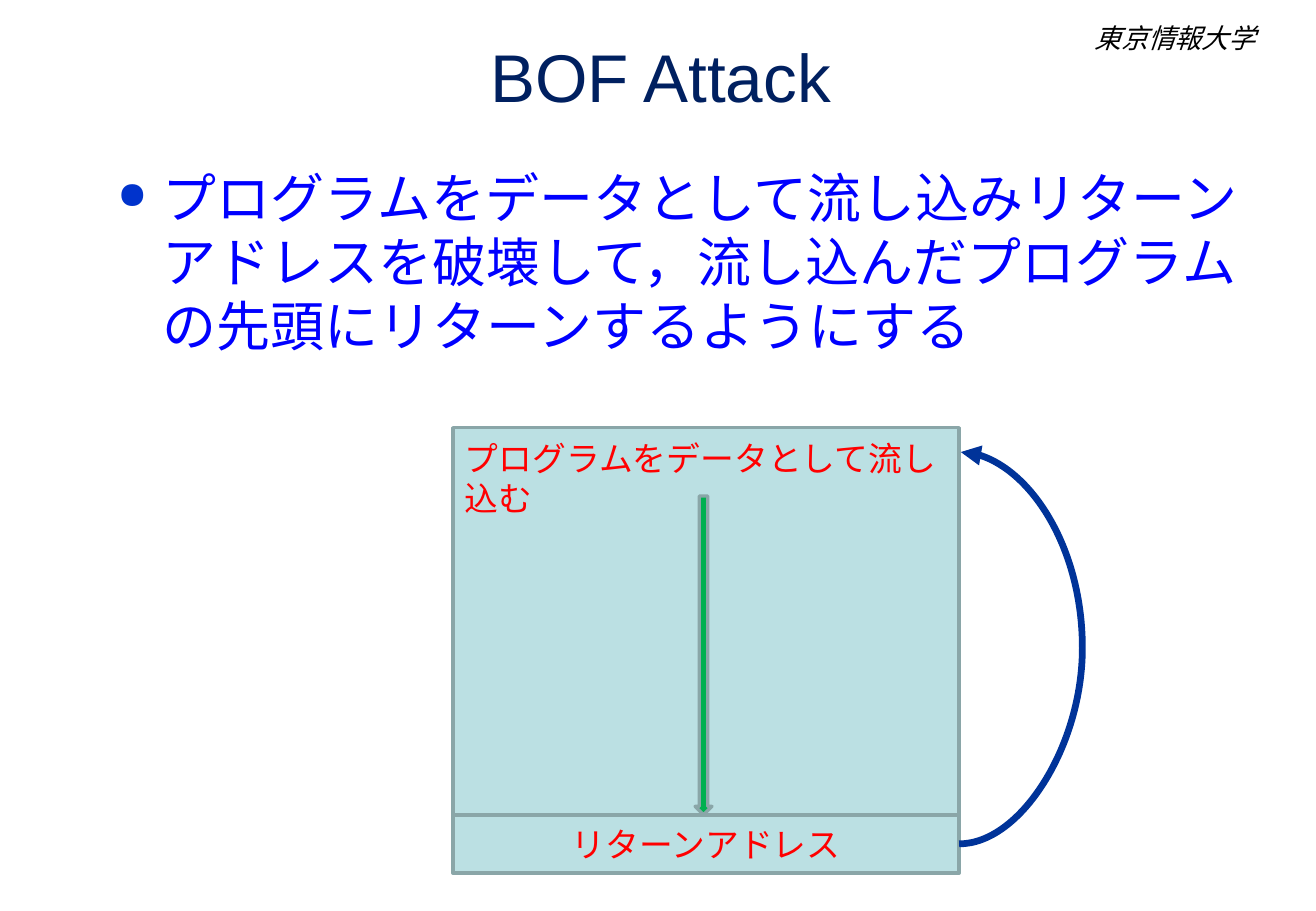
import pptx
import pptx.util
import pptx.dml.color
import pptx.enum.shapes
import pptx.enum.text
import pptx.oxml
import pptx.oxml.ns

Pt = pptx.util.Pt
ALIGN = pptx.enum.text.PP_ALIGN
ANCHOR = pptx.enum.text.MSO_ANCHOR
SHAPE = pptx.enum.shapes.MSO_SHAPE

LATIN_FONT = "Arial"
JAPANESE_FONT = "Noto Sans CJK JP"
BOX_FILL, BOX_LINE = "BBE0E3", "8AA6A8"
RED = "FF0000"

# Memory diagram: the return address sits right under the buffer
STACK_LEFT, STACK_WIDTH = 268.5, 300
BUFFER_TOP, BUFFER_HEIGHT = 253.5, 229.5
RETURN_TOP, RETURN_HEIGHT = BUFFER_TOP + BUFFER_HEIGHT, 34.5
STACK_RIGHT = STACK_LEFT + STACK_WIDTH


def color(hex_string):
    return pptx.dml.color.RGBColor.from_string(hex_string)


def xml(tag, attributes):
    namespace = pptx.oxml.ns.nsdecls("a")
    return pptx.oxml.parse_xml(f"<a:{tag} {namespace} {attributes}/>")


def write(shape, text, size, hex_string, font=LATIN_FONT, align=ALIGN.LEFT,
          anchor=ANCHOR.TOP, wrap=True, italic=None, line_height=None):
    frame = shape.text_frame
    frame.word_wrap = wrap
    frame.vertical_anchor = anchor
    paragraph = frame.paragraphs[0]
    paragraph.alignment = align
    if line_height:
        paragraph.line_spacing = Pt(line_height)
    run = paragraph.add_run()
    run.text = text
    run.font.size = Pt(size)
    run.font.italic = italic
    run.font.color.rgb = color(hex_string)
    run.font.name = font
    run.font._element.find(pptx.oxml.ns.qn("a:latin")).addnext(
        xml("ea", f'typeface="{font}"'))
    return paragraph


def add_text(slide, left, top, width, height, text, size, hex_string, **style):
    box = slide.shapes.add_textbox(Pt(left), Pt(top), Pt(width), Pt(height))
    return write(box, text, size, hex_string, **style)


def add_box(slide, kind, left, top, width, height, fill=BOX_FILL):
    shape = slide.shapes.add_shape(kind, Pt(left), Pt(top), Pt(width), Pt(height))
    shape.shadow.inherit = False
    shape.fill.solid()
    shape.fill.fore_color.rgb = color(fill)
    shape.line.color.rgb = color(BOX_LINE)
    shape.line.width = Pt(2)
    return shape


def add_bullet(paragraph, indent):
    properties = paragraph._p.get_or_add_pPr()
    properties.set("marL", str(Pt(indent)))
    properties.set("indent", str(-Pt(indent)))
    bullet_color = xml("buClr", "")
    bullet_color.append(xml("srgbClr", 'val="0033CC"'))
    properties.append(bullet_color)
    properties.append(xml("buSzPct", 'val="70000"'))
    properties.append(xml("buChar", 'char="●"'))


def add_return_arrow(slide, return_box):
    start_y = RETURN_TOP + RETURN_HEIGHT / 2
    arrow = slide.shapes.add_connector(
        pptx.enum.shapes.MSO_CONNECTOR.CURVE,
        Pt(STACK_RIGHT), Pt(start_y), Pt(STACK_RIGHT + 1), Pt(268))
    arrow.begin_connect(return_box, 3)
    arrow.line.color.rgb = color("003399")
    arrow.line.width = Pt(4)
    arrow.line._get_or_add_ln().append(xml("tailEnd", 'type="triangle"'))
    properties = arrow._element.spPr
    properties.append(xml("effectLst", ""))
    # Bulge to the right, as a multiple of the one-point width
    guides = properties.find(pptx.oxml.ns.qn("a:prstGeom")).get_or_add_avLst()
    guides.append(xml("gd", 'name="adj1" fmla="val 7363600"'))


def main():
    presentation = pptx.Presentation()
    presentation.slide_width, presentation.slide_height = Pt(780), Pt(540)
    slide = presentation.slides.add_slide(presentation.slide_layouts[5])

    # Header and title
    add_text(slide, 641.5, 9.5, 110, 26.5, "東京情報大学", 16, "000000",
             wrap=False, italic=True)
    title = slide.shapes.title
    title.left, title.top, title.width, title.height = Pt(40.5), Pt(0), Pt(702), Pt(90)
    write(title, "BOF Attack", 40, "002060", align=ALIGN.CENTER, anchor=ANCHOR.MIDDLE)

    # Explanation
    explanation = add_text(
        slide, 62.5, 94.5, 692, 122.5,
        "プログラムをデータとして流し込みリターンアドレスを破壊して，"
        "流し込んだプログラムの先頭にリターンするようにする",
        32, "0000FF", font=JAPANESE_FONT, line_height=38)
    add_bullet(explanation, 27)

    # Return address and the jump back to the start of the buffer
    return_box = add_box(slide, SHAPE.RECTANGLE, STACK_LEFT, RETURN_TOP,
                         STACK_WIDTH, RETURN_HEIGHT)
    write(return_box, "リターンアドレス", 20, RED,
          align=ALIGN.CENTER, anchor=ANCHOR.MIDDLE)
    add_return_arrow(slide, return_box)

    # Buffer filled from top to bottom
    add_box(slide, SHAPE.RECTANGLE, STACK_LEFT, BUFFER_TOP, STACK_WIDTH, BUFFER_HEIGHT)
    add_box(slide, SHAPE.DOWN_ARROW, 412, 294, 10, RETURN_TOP - 294, fill="00B050")
    add_text(slide, STACK_LEFT, 256.5, 306.5, 53.5, "プログラムをデータとして流し込む",
             20, RED, font=JAPANESE_FONT, line_height=23.5)

    presentation.save("out.pptx")


if __name__ == "__main__":
    main()
